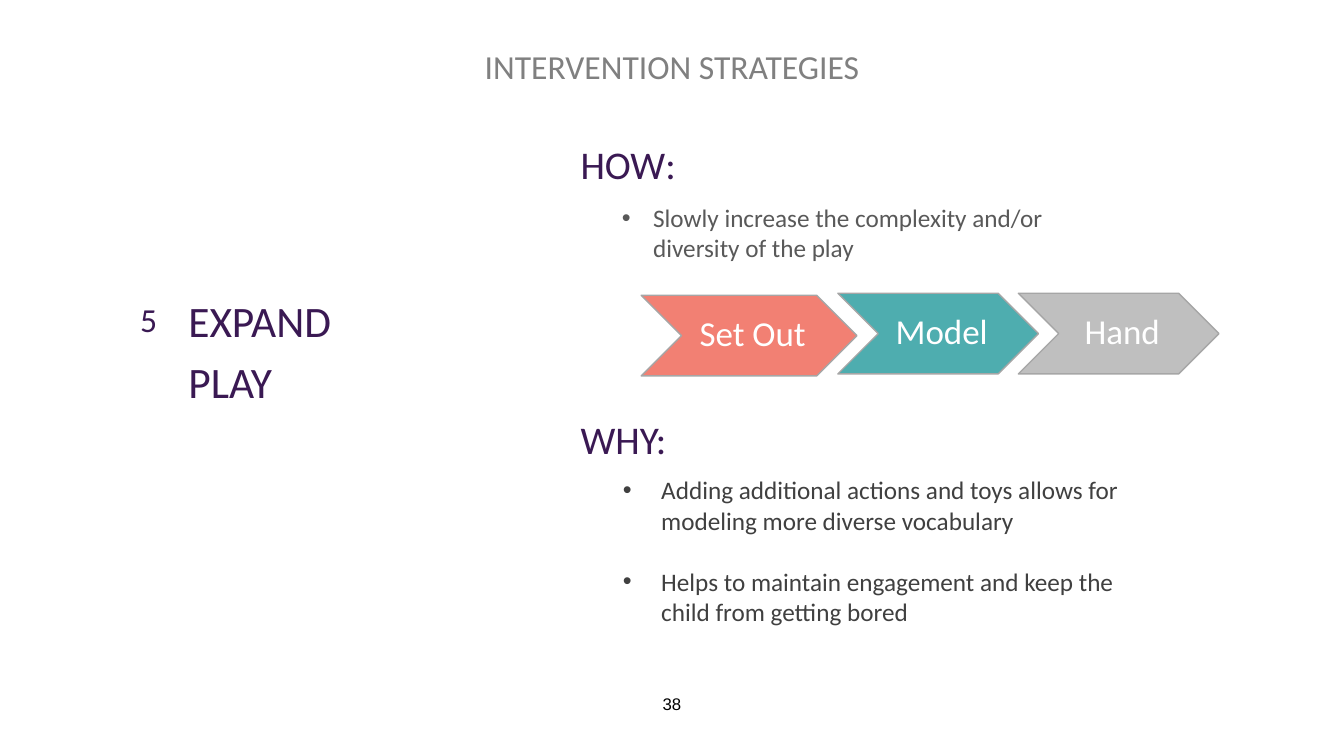
"""Build the Expand Play intervention strategy slide."""
from lxml import etree
from pptx import Presentation
from pptx.dml.color import RGBColor
from pptx.enum.shapes import MSO_SHAPE
from pptx.enum.text import MSO_ANCHOR, PP_ALIGN
from pptx.oxml.ns import qn
from pptx.util import Inches, Pt

CHEVRON = MSO_SHAPE.CHEVRON
CENTER, LEFT = PP_ALIGN.CENTER, PP_ALIGN.LEFT
TOP, MIDDLE = MSO_ANCHOR.TOP, MSO_ANCHOR.MIDDLE
PURPLE, GREY = "3A1953", "A6A6A6"

TITLE = "INTERVENTION STRATEGIES"
PAGE = "38"
STEP_NUMBER = "5"
STRATEGY = ["EXPAND", "PLAY"]
HEADINGS = [("HOW:", 1.34), ("WHY:", 4.07)]
BULLETS = [
    (["Slowly increase the complexity and/or diversity of the play"],
     (6.07, 1.96, 5.03, 0.71), 0.31, "595959"),
    (["Adding additional actions and toys allows for modeling more diverse vocabulary",
      "Helps to maintain engagement and keep the child from getting bored"],
     (6.08, 4.66, 5.28, 1.62), 0.38, "404040"),
]
STEPS = [
    ("Set Out", 6.36, 2.93, 2.14, "F28073"),
    ("Model", 8.31, 2.91, 1.99, "4EADAF"),
    ("Hand", 10.1, 2.91, 1.99, "BFBFBF"),
]
STEP_HEIGHT = 0.8


def rgb(value):
    return RGBColor.from_string(value)


def write(sp, lines, size, color, font="Calibri", align=LEFT, anchor=TOP,
          spacing=None, before=0, after=0, margin=0, bullet=False):
    tf = sp.text_frame
    tf.word_wrap = True
    tf.vertical_anchor = anchor
    for i, line in enumerate(lines):
        p = tf.paragraphs[0] if i == 0 else tf.add_paragraph()
        p.alignment = align
        p.space_before, p.space_after = Pt(before), Pt(after)
        if spacing:
            p.line_spacing = spacing
        if margin:
            pr = p._p.get_or_add_pPr()
            pr.set("marL", str(Inches(margin)))
            pr.set("indent", str(-Inches(margin) if bullet else 0))
            if bullet:
                etree.SubElement(pr, qn("a:buFont")).set("typeface", "Arial")
                etree.SubElement(pr, qn("a:buChar")).set("char", "•")
        r = p.add_run()
        r.text = line
        r.font.name, r.font.size = font, Pt(size)
        r.font.color.rgb = rgb(color)


def add_text(s, box, lines, size, color, **fmt):
    sp = s.shapes.add_textbox(*map(Inches, box))
    write(sp, lines, size, color, **fmt)


def add_step(s, label, left, top, width, fill):
    sp = s.shapes.add_shape(CHEVRON, *map(Inches, (left, top, width, STEP_HEIGHT)))
    sp.shadow.inherit = False
    sp.fill.solid()
    sp.fill.fore_color.rgb = rgb(fill)
    sp.line.color.rgb = rgb(GREY)
    sp.line.width = Pt(1)
    tf = sp.text_frame
    tf.margin_left = Inches(0.11)
    tf.margin_top = tf.margin_right = tf.margin_bottom = Inches(0.04)
    write(sp, [label], 25, "FFFFFF", align=CENTER, anchor=MIDDLE, spacing=0.9)


def main():
    prs = Presentation()
    prs.slide_width, prs.slide_height = Inches(13.33), Inches(7.5)
    s = prs.slides.add_slide(prs.slide_layouts[5])

    title = s.shapes.title
    title.left, title.top, title.width, title.height = map(Inches, (0, 0.01, 13.33, 1.34))
    write(title, [TITLE], 24, "808080", align=CENTER, anchor=MIDDLE, spacing=0.9)

    add_text(s, (1.29, 2.92, 0.52, 0.5), [STEP_NUMBER], 24, PURPLE)
    add_text(s, (1.37, 2.93, 4.57, 1.91), STRATEGY, 31, PURPLE,
             spacing=0.9, before=10, margin=0.4)
    for heading, top in HEADINGS:
        add_text(s, (5.66, top, 3.44, 0.57), [heading], 28, PURPLE)
    for lines, box, margin, color in BULLETS:
        add_text(s, box, lines, 18, color, after=22, margin=margin, bullet=True)
    for step in STEPS:
        add_step(s, *step)
    add_text(s, (0, 6.63, 13.33, 0.7), [PAGE], 12, "000000",
             font="Arial", align=CENTER, anchor=MIDDLE)

    prs.save("out.pptx")


if __name__ == "__main__":
    main()
